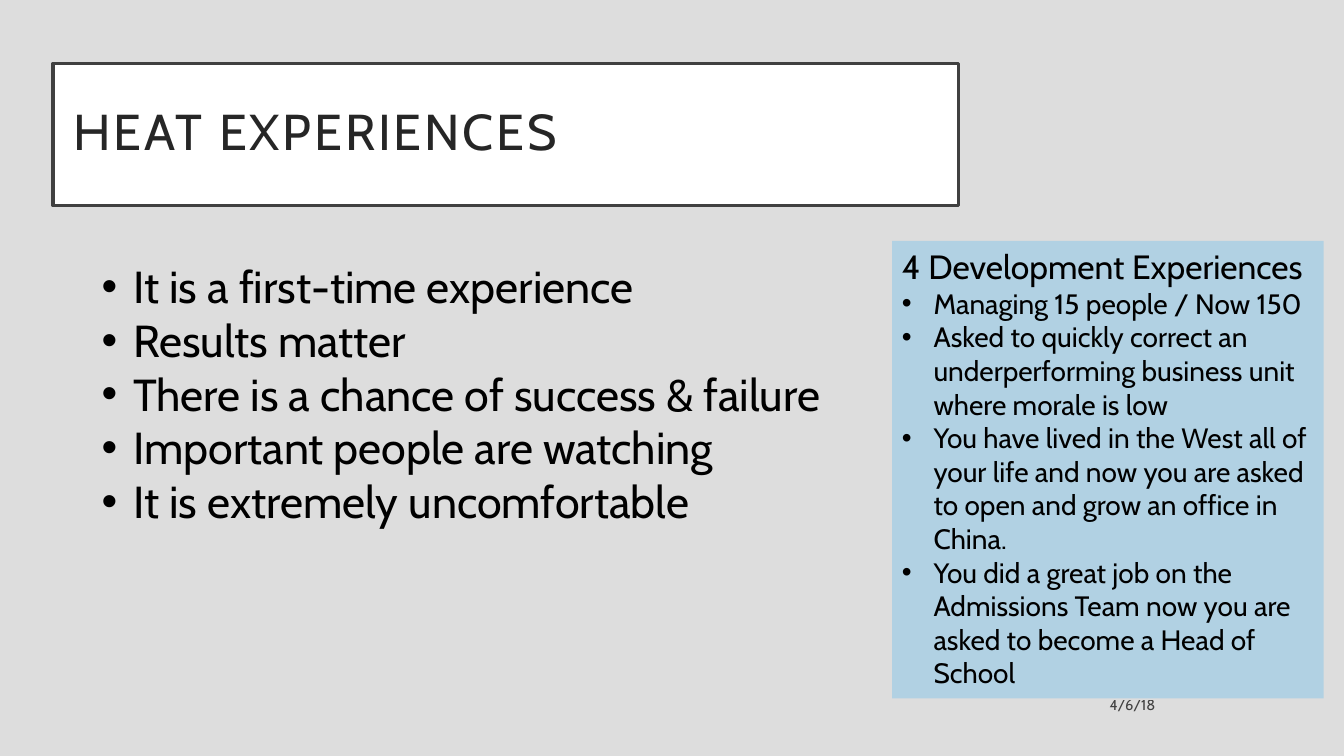
from dataclasses import dataclass

from lxml import etree
from pptx import Presentation
from pptx import util as u
from pptx.dml.color import RGBColor
from pptx.enum import text
from pptx.oxml import ns


@dataclass(frozen=True)
class Theme:
    font: str = "Cabin"
    back: str = "DDDDDD"
    white: str = "FFFFFF"
    edge: str = "404040"
    head: str = "262626"
    ink: str = "000000"
    panel: str = "B1D1E3"
    title: float = 36
    body: float = 32
    lead: float = 24
    item: float = 20
    date: float = 10.5
    hang: float = 22.5


def add_bullet(para, hang):
    props = para._p.get_or_add_pPr()
    props.set("marL", str(u.Pt(hang)))
    props.set("indent", str(-u.Pt(hang)))
    etree.SubElement(props, ns.qn("a:buFont")).set("typeface", "Arial")
    etree.SubElement(props, ns.qn("a:buChar")).set("char", "•")


def write(para, words, font, size, color, align=text.PP_ALIGN.LEFT,
          hang=0, space=None, track=0, alpha=None):
    """Put formatted words in a paragraph."""
    para.alignment = align
    if space:
        para.line_spacing = space
    if hang:
        add_bullet(para, hang)
    run = para.add_run()
    run.text = words
    run.font.name = font
    run.font.size = u.Pt(size)
    run.font.color.rgb = RGBColor.from_string(color)
    if track:
        run._r.get_or_add_rPr().set("spc", str(track * 100))
    if alpha:
        tint = run._r.rPr.find(".//" + ns.qn("a:srgbClr"))
        etree.SubElement(tint, ns.qn("a:alpha")).set("val", str(alpha * 1000))


class Deck:
    def __init__(self, theme):
        self.theme = theme
        self.show = Presentation()
        self.show.slide_width, self.show.slide_height = u.Pt(960), u.Pt(540)
        self.slide = self.show.slides.add_slide(self.show.slide_layouts[5])
        self.paint(self.slide.background.fill, theme.back)

    def paint(self, fill, color):
        fill.solid()
        fill.fore_color.rgb = RGBColor.from_string(color)

    def title(self, words, left, top, width, height):
        t, box = self.theme, self.slide.shapes.title
        box.left, box.top = u.Pt(left), u.Pt(top)
        box.width, box.height = u.Pt(width), u.Pt(height)
        self.paint(box.fill, t.white)
        self.paint(box.line.fill, t.edge)
        box.line.width = u.Pt(2.5)
        frame = box.text_frame
        frame.auto_size = text.MSO_AUTO_SIZE.NONE
        frame.vertical_anchor = text.MSO_ANCHOR.MIDDLE
        frame.margin_left = frame.margin_right = u.Pt(14.4)
        frame.margin_top = frame.margin_bottom = u.Pt(14.4)
        write(frame.paragraphs[0], words, t.font, t.title, t.head,
              space=0.9, track=2)

    def box(self, lines, left, top, width, height, fill=None,
            fit=text.MSO_AUTO_SIZE.SHAPE_TO_FIT_TEXT,
            anchor=text.MSO_ANCHOR.TOP):
        """Add a text box; each line is (words, size, format)."""
        box = self.slide.shapes.add_textbox(*map(u.Pt, (left, top, width, height)))
        if fill:
            self.paint(box.fill, fill)
        frame = box.text_frame
        frame.word_wrap = True
        frame.auto_size = fit
        frame.vertical_anchor = anchor
        for i, (words, size, style) in enumerate(lines):
            para = frame.add_paragraph() if i else frame.paragraphs[0]
            write(para, words, self.theme.font, size, self.theme.ink, **style)

    def bullets(self, items, size):
        return [(item, size, {"hang": self.theme.hang}) for item in items]


def main():
    theme = Theme()
    deck = Deck(theme)

    # Title
    deck.title("HEAT EXPERIENCES", 38, 45.4, 646.6, 101.5)

    # Main points
    points = ["It is a first-time experience",
              "Results matter",
              "There is a chance of success & failure",
              "Important people are watching",
              "It is extremely uncomfortable"]
    deck.box(deck.bullets(points, theme.body), 65.5, 181.4, 537, 205)

    # Side panel
    cases = ["Managing 15 people / Now 150",
             "Asked to quickly correct an underperforming business unit "
             "where morale is low",
             "You have lived in the West all of your life and now you are "
             "asked to open and grow an office in China.",
             "You did a great job on the Admissions Team now you are asked "
             "to become a Head of School"]
    lead = ("4 Development Experiences", theme.lead, {})
    deck.box([lead] + deck.bullets(cases, theme.item),
             637.2, 172.1, 308.2, 326.9, fill=theme.panel)

    # Date
    style = {"align": text.PP_ALIGN.RIGHT, "alpha": 70}
    deck.box([("4/6/18", theme.date, style)], 615.6, 491, 216.7, 25.2,
             fit=text.MSO_AUTO_SIZE.NONE, anchor=text.MSO_ANCHOR.MIDDLE)

    deck.show.save("out.pptx")


if __name__ == "__main__":
    main()
